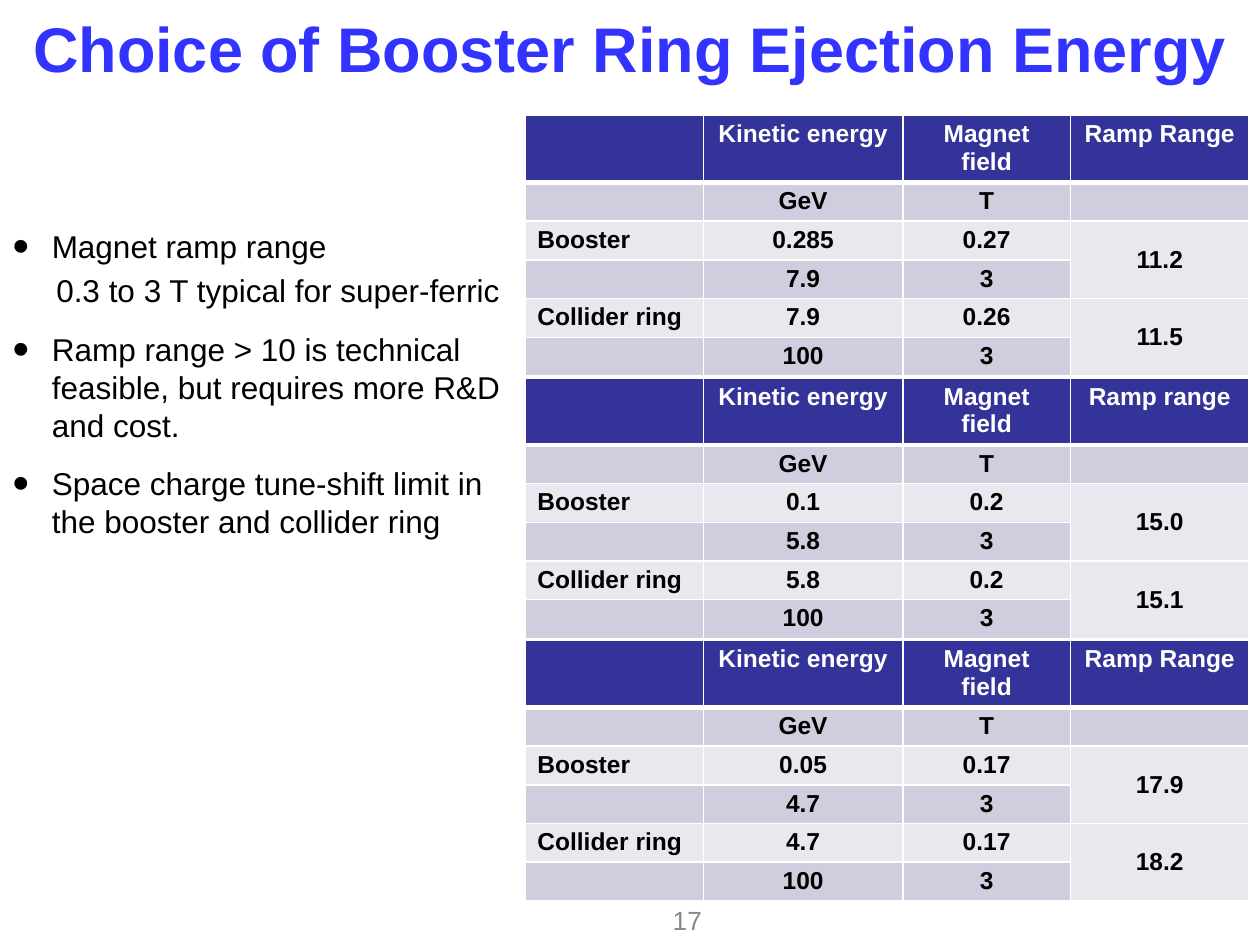
"""Build the slide comparing booster ring ejection energies."""
from lxml import etree
from pptx import Presentation
from pptx import util as u
from pptx.dml.color import RGBColor
from pptx.enum import text
from pptx.oxml.ns import qn

COLORS = {
    "title": "3333FF", "ink": "000000", "number": "898989",
    "header": "333399", "header_text": "FFFFFF", "rule": "FFFFFF",
    "dark_band": "CECEDE", "light_band": "E8E8EF",
}


def add_run(para, words, size, color, bold=False):
    span = para.add_run()
    span.text = words
    span.font.name = "Arial"
    span.font.size = u.Pt(size)
    span.font.bold = bold
    span.font.color.rgb = RGBColor.from_string(COLORS[color])


def place(box, left, top, width, height):
    box.left, box.top = u.Cm(left), u.Cm(top)
    box.width, box.height = u.Cm(width), u.Cm(height)
    box.text_frame.word_wrap = True
    box.text_frame.auto_size = text.MSO_AUTO_SIZE.NONE


deck = Presentation()
deck.slide_width, deck.slide_height = u.Cm(25.4), u.Cm(19.05)
page = deck.slides.add_slide(deck.slide_layouts[1])

title = page.shapes.title
place(title, 0, 0, 25.4, 1.9)
title.text_frame.vertical_anchor = text.MSO_ANCHOR.MIDDLE
para = title.text_frame.paragraphs[0]
para.alignment = text.PP_ALIGN.CENTER
add_run(para, "Choice of Booster Ring Ejection Energy", 36, "title", True)

body = page.placeholders[1]
place(body, 0, 4.45, 10.6, 7.2)
points = [
    ("Magnet ramp range", True, 0),
    ("0.3 to 3 T typical for super-ferric", False, 3.6),
    ("Ramp range > 10 is technical feasible, but requires more R&D and cost.", True, 12),
    ("Space charge tune-shift limit in the booster and collider ring", True, 12),
]
for index, (words, bulleted, gap) in enumerate(points):
    para = body.text_frame.paragraphs[0] if index == 0 else body.text_frame.add_paragraph()
    para.space_before = u.Pt(gap)
    properties = para._p.get_or_add_pPr()
    if bulleted:
        properties.set("marL", str(u.Cm(0.79)))
        properties.set("indent", str(u.Cm(-0.79)))
        etree.SubElement(properties, qn("a:buSzPct"), val="150000")
        etree.SubElement(properties, qn("a:buFont"), typeface="Arial")
        etree.SubElement(properties, qn("a:buChar"), char="•")
    else:
        properties.set("marL", str(u.Cm(0.88)))
        properties.set("indent", "0")
        etree.SubElement(properties, qn("a:buNone"))
    add_run(para, words, 18, "ink")

options = [
    (2.33, "Ramp Range", "0.285", "7.9", "0.27", "0.26", "11.2", "11.5"),
    (7.62, "Ramp range", "0.1", "5.8", "0.2", "0.2", "15.0", "15.1"),
    (12.91, "Ramp Range", "0.05", "4.7", "0.17", "0.17", "17.9", "18.2"),
]
for top, heading, injection, ejection, booster_field, collider_field, booster_ramp, collider_ramp in options:
    rows = [
        ["", "Kinetic energy", "Magnet field", heading],
        ["", "GeV", "T", ""],
        ["Booster", injection, booster_field, booster_ramp],
        ["", ejection, "3", ""],
        ["Collider ring", ejection, collider_field, collider_ramp],
        ["", "100", "3", ""],
    ]
    table = page.shapes.add_table(6, 4, u.Cm(10.58), u.Cm(top), u.Cm(14.6), u.Cm(5.25)).table
    for column, width in zip(table.columns, [3.6, 4.02, 3.38, 3.6]):
        column.width = u.Cm(width)
    for r, values in enumerate(rows):
        table.rows[r].height = u.Cm(0.78 if r else 1.35)
        band = "header" if r == 0 else "dark_band" if r % 2 else "light_band"
        for c, value in enumerate(values):
            cell = table.cell(r, c)
            cell.margin_top = cell.margin_bottom = u.Cm(0.1)
            cell.fill.solid()
            cell.fill.fore_color.rgb = RGBColor.from_string(COLORS[band])
            if r == 0:
                rule = etree.Element(qn("a:lnB"), w=str(u.Pt(3)))
                paint = etree.SubElement(rule, qn("a:solidFill"))
                etree.SubElement(paint, qn("a:srgbClr"), val=COLORS["rule"])
                cell._tc.get_or_add_tcPr().insert(0, rule)
            para = cell.text_frame.paragraphs[0]
            if c:
                para.alignment = text.PP_ALIGN.CENTER
            if value:
                add_run(para, value, 14, "ink" if r else "header_text", True)
            else:
                ending = etree.SubElement(para._p, qn("a:endParaRPr"), sz="1400")
                etree.SubElement(ending, qn("a:latin"), typeface="Arial")
    for r in (2, 4):
        table.cell(r, 3).merge(table.cell(r + 1, 3))
        table.cell(r, 3).vertical_anchor = text.MSO_ANCHOR.MIDDLE

number = page.shapes.add_textbox(0, 0, 0, 0)
place(number, 10.6, 18.03, 3.8, 1.02)
number.text_frame.vertical_anchor = text.MSO_ANCHOR.MIDDLE
para = number.text_frame.paragraphs[0]
para.alignment = text.PP_ALIGN.RIGHT
add_run(para, "17", 15, "number")

deck.save("out.pptx")
